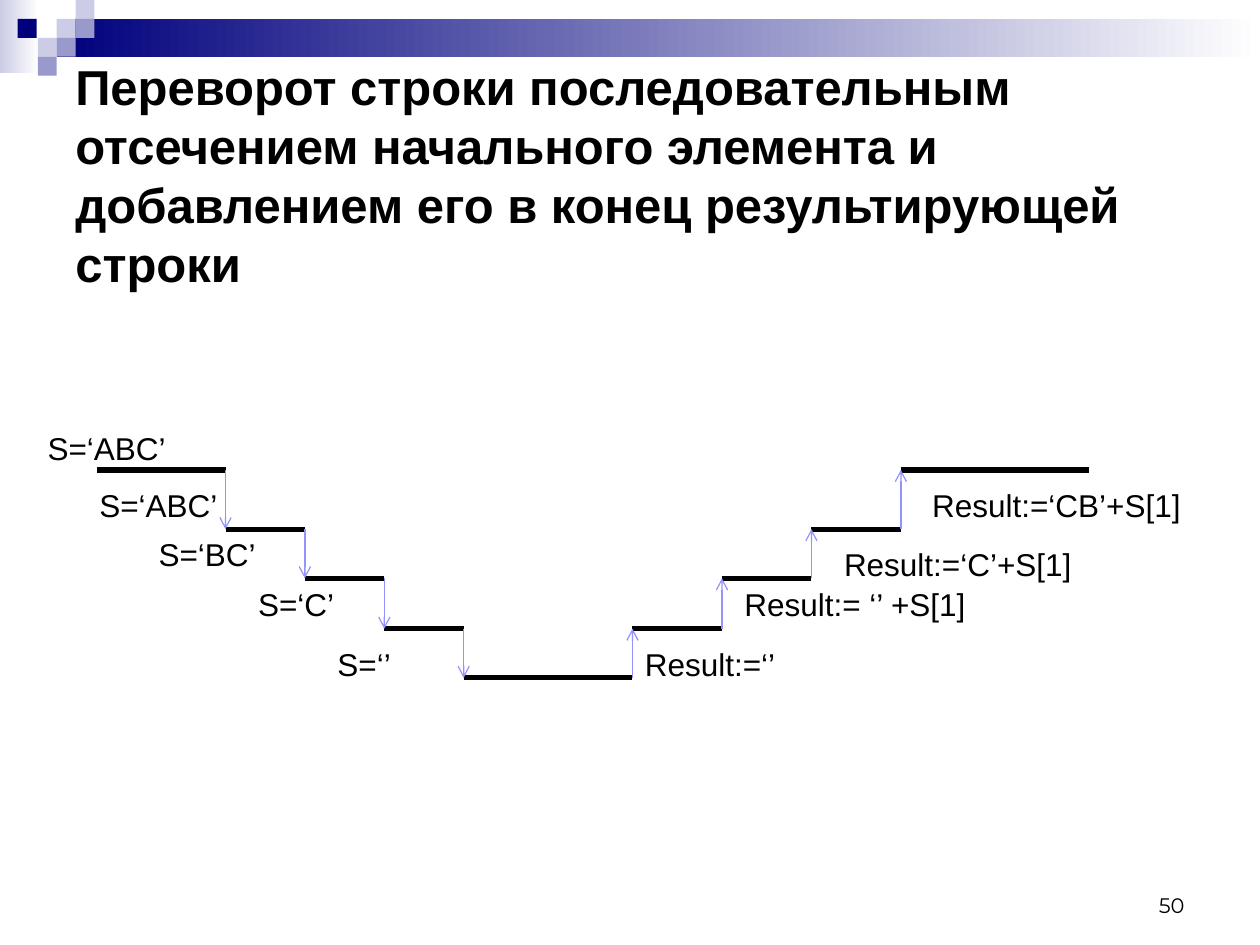
from itertools import pairwise
from typing import NamedTuple

from lxml import etree
from pptx import Presentation
from pptx import util as u
from pptx.dml.color import RGBColor
from pptx.enum import shapes, text
from pptx.oxml import ns

BLACK, NAVY, VIOLET, LILAC, WHITE = "000000", "00007D", "9999CC", "CCCCE6", "FFFFFF"
ARROW_BLUE = "9393FC"
SQUARE = 0.15


class Tread(NamedTuple):
    left: float
    right: float
    y: float


class Label(NamedTuple):
    words: str
    left: float
    top: float
    width: float


LEVELS = [3.73, 4.2, 4.59, 4.99, 5.38]
EDGES = [0.77, 1.79, 2.42, 3.05, 3.68, 5.02, 5.73, 6.44, 7.15, 8.64]
TREADS = [
    Tread(left, right, y)
    for (left, right), y in zip(pairwise(EDGES), LEVELS + LEVELS[-2::-1])
]

LABELS = [
    Label("S=‘ABC’", 0.28, 3.36, 1.14),
    Label("S=‘ABC’", 0.69, 3.81, 1.14),
    Label("S=‘BC’", 1.16, 4.2, 1.02),
    Label("S=‘С’", 1.95, 4.59, 0.81),
    Label("S=‘’", 2.58, 5.07, 0.71),
    Label("Result:=‘’", 5.02, 5.07, 1.57),
    Label("Result:= ‘’ +S[1]", 5.81, 4.59, 1.97),
    Label("Result:=‘C’+S[1]", 6.6, 4.28, 2.01),
    Label("Result:=‘CB’+S[1]", 7.3, 3.81, 2.17),
]

SQUARES = [
    (0.45, 0.15, LILAC),
    (0.6, 0, LILAC),
    (0.6, 0.15, VIOLET),
    (0.3, 0.3, LILAC),
    (0.14, 0.15, NAVY),
    (0.45, 0.3, VIOLET),
    (0.3, 0.45, VIOLET),
]


def color(code: str) -> RGBColor:
    return RGBColor.from_string(code)


def add_block(page, left: float, top: float, width: float, height: float,
              start: str, end: str | None = None) -> None:
    """Draw a rectangle, fading to the right when an end colour is given."""
    block = page.shapes.add_shape(
        shapes.MSO_SHAPE.RECTANGLE,
        u.Inches(left), u.Inches(top), u.Inches(width), u.Inches(height))
    block.shadow.inherit = False
    block.line.fill.background()
    if end is None:
        block.fill.solid()
        block.fill.fore_color.rgb = color(start)
        return
    block.fill.gradient()
    block.fill.gradient_angle = 0
    for stop, code in zip(block.fill.gradient_stops, (start, end)):
        stop.color.rgb = color(code)


def add_line(page, start: tuple[float, float], end: tuple[float, float],
             code: str, weight: float, arrow: bool = False) -> None:
    line = page.shapes.add_connector(
        shapes.MSO_CONNECTOR.STRAIGHT,
        *(u.Inches(value) for value in (*start, *end)))
    line.line.color.rgb = color(code)
    line.line.width = u.Pt(weight)
    if arrow:
        etree.SubElement(line.line._get_or_add_ln(), ns.qn("a:tailEnd"), type="arrow")
    etree.SubElement(line._element.spPr, ns.qn("a:effectLst"))


def add_text(page, words: str, left: float, top: float, width: float,
             height: float = 0.4, size: float = 18, font: str = "Arial",
             bold: bool = False, wrap: bool = False,
             anchor=text.MSO_ANCHOR.TOP, align=text.PP_ALIGN.LEFT) -> None:
    box = page.shapes.add_textbox(
        u.Inches(left), u.Inches(top), u.Inches(width), u.Inches(height))
    frame = box.text_frame
    frame.word_wrap = wrap
    frame.vertical_anchor = anchor
    para = frame.paragraphs[0]
    para.text = words
    para.alignment = align
    para.font.name = font
    para.font.size = u.Pt(size)
    para.font.bold = bold
    para.font.color.rgb = color(BLACK)


def main() -> None:
    deck = Presentation()
    deck.slide_width, deck.slide_height = u.Inches(10), u.Inches(7.5)
    page = deck.slides.add_slide(deck.slide_layouts[6])

    add_block(page, 0, 0, 0.31, 0.58, LILAC, WHITE)
    add_block(page, 0.45, 0.15, 9.55, 0.3, NAVY, WHITE)
    for left, top, code in SQUARES:
        add_block(page, left, top, SQUARE, SQUARE, code)

    add_text(page, "50", 7.17, 6.83, 2.33, 0.5, size=12, font="Montserrat",
             wrap=True, anchor=text.MSO_ANCHOR.BOTTOM, align=text.PP_ALIGN.RIGHT)
    add_text(page, "Переворот строки последовательным отсечением начального "
             "элемента и добавлением его в конец результирующей строки",
             0.5, 0.36, 9.23, 2.05, size=28, bold=True, wrap=True,
             anchor=text.MSO_ANCHOR.MIDDLE)

    for tread in TREADS:
        add_line(page, (tread.left, tread.y), (tread.right, tread.y), BLACK, 3)
    for label in LABELS:
        add_text(page, *label)
    for tread, following in pairwise(TREADS):
        add_line(page, (tread.right, tread.y), (tread.right, following.y),
                 ARROW_BLUE, 0.75, arrow=True)

    deck.save("out.pptx")


if __name__ == "__main__":
    main()
